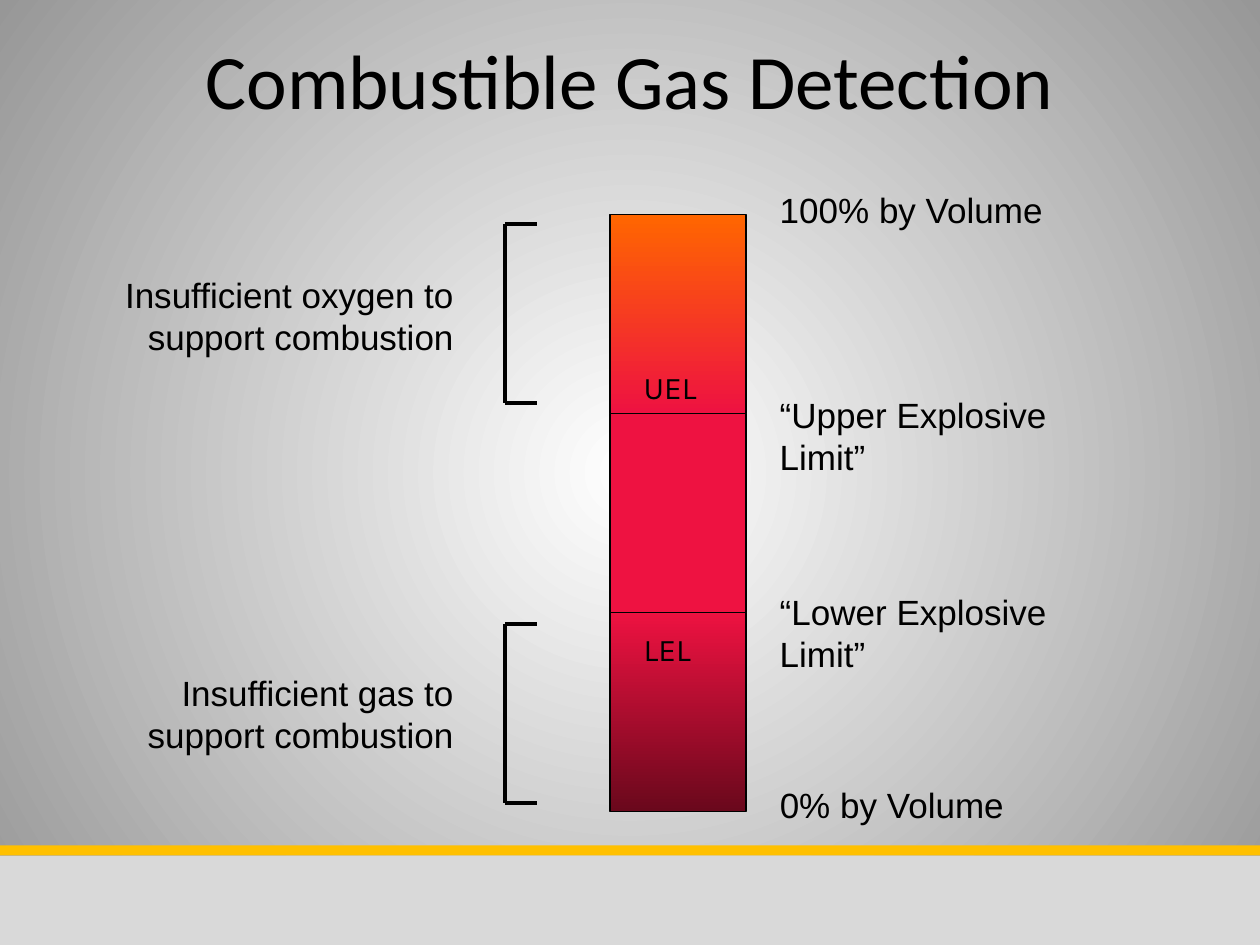
from lxml.etree import SubElement
from pptx import Presentation
from pptx.dml.color import RGBColor
from pptx.enum.shapes import MSO_CONNECTOR, MSO_SHAPE
from pptx.enum.text import MSO_ANCHOR, PP_ALIGN
from pptx.oxml.ns import qn
from pptx.util import Inches, Pt

HEX = {
    "black": "000000", "white": "FFFFFF", "gray": "979797", "base": "D9D9D9",
    "gold": "FFC000", "orange": "FF6600", "red": "EE1241", "dark": "6A081C",
}


def tint(name):
    """Return the named colour."""
    return RGBColor.from_string(HEX[name])


def blend(fill, first, last):
    """Fill with two colours and return the fill."""
    fill.gradient()
    for stop, name in zip(fill.gradient_stops, (first, last)):
        stop.color.rgb = tint(name)
    for stop, place in zip(fill.gradient_stops, (0, 1)):
        stop.position = place
    return fill


def glow(slide):
    """Give the slide a round gradient that starts at its centre."""
    blend(slide.background.fill, "white", "gray")
    grad = slide.element.find(".//" + qn("a:gradFill"))
    grad.remove(grad.find(qn("a:lin")))
    ring = SubElement(grad, qn("a:path"), {"path": "circle"})
    SubElement(ring, qn("a:fillToRect"), dict.fromkeys("ltrb", "50000"))


def block(slide, left, top, width, height, first, last=None, edge=False):
    """Draw a rectangle in one colour or in a downward gradient."""
    box = slide.shapes.add_shape(
        MSO_SHAPE.RECTANGLE, Inches(left), Inches(top), Inches(width), Inches(height))
    box.shadow.inherit = False
    if last:
        blend(box.fill, first, last).gradient_angle = 270
    else:
        box.fill.solid()
        box.fill.fore_color.rgb = tint(first)
    if edge:
        box.line.color.rgb = tint("black")
        box.line.width = Pt(0.75)
    else:
        box.line.fill.background()


def label(slide, text, left, top, width, height, size=20, font="Arial",
          align=PP_ALIGN.LEFT, wrap=False, inset=0.1, anchor=MSO_ANCHOR.TOP):
    """Place one paragraph of text."""
    box = slide.shapes.add_textbox(
        Inches(left), Inches(top), Inches(width), Inches(height))
    frame = box.text_frame
    frame.word_wrap = wrap
    frame.margin_right = Inches(inset)
    frame.vertical_anchor = anchor
    para = frame.paragraphs[0]
    para.alignment = align
    run = para.add_run()
    run.text = text
    run.font.name = font
    run.font.size = Pt(size)
    run.font.color.rgb = tint("black")


def stroke(slide, start, end):
    """Draw a straight black line."""
    line = slide.shapes.add_connector(
        MSO_CONNECTOR.STRAIGHT, *map(Inches, start + end))
    line.line.color.rgb = tint("black")
    line.line.width = Pt(2.25)
    SubElement(line.element.spPr, qn("a:effectLst"))


def bracket(slide, top, left=4.01, right=4.26, height=1.42):
    """Draw a square bracket that opens to the right."""
    low = top + height
    stroke(slide, (left, top), (left, low))
    for y in (low, top):
        stroke(slide, (left, y), (right, y))


def main():
    """Build the slide and save it."""
    deck = Presentation()
    deck.slide_width, deck.slide_height = Inches(10), Inches(7.5)
    slide = deck.slides.add_slide(deck.slide_layouts[6])
    glow(slide)
    block(slide, -0.03, 6.79, 10.03, 0.71, "base")
    block(slide, -0.03, 6.71, 10.03, 0.08, "gold")
    label(slide, "Combustible Gas Detection", 0.5, 0, 9, 1.25, 44, "Calibri",
          PP_ALIGN.CENTER, True, anchor=MSO_ANCHOR.MIDDLE)

    zones = [("orange", "red"), ("red", None), ("red", "dark")]
    for i, (first, last) in enumerate(zones):
        block(slide, 4.84, 1.7 + i * 1.58, 1.08, 1.58, first, last, True)
    for text, top, width in [("LEL", 4.95, 0.59), ("UEL", 2.87, 0.63)]:
        label(slide, text, 5.01, top, width, 0.4, 18, "Karla")

    for text, top, width in [("0% by Volume", 6.17, 1.99),
                             ("100% by Volume", 1.45, 2.3)]:
        label(slide, text, 6.09, top, width, 0.43)
    for text, top in [("“Upper Explosive Limit”", 3.07),
                      ("“Lower Explosive Limit”", 4.64)]:
        label(slide, text, 6.09, top, 3.07, 0.43, wrap=True, inset=0.6)

    for text, left, top, mark in [
            ("Insufficient gas to support combustion", 0.93, 5.28, 4.95),
            ("Insufficient oxygen to support combustion", 0.68, 2.12, 1.78)]:
        bracket(slide, mark)
        label(slide, text, left, top, 3.7 - left, 0.77,
              align=PP_ALIGN.RIGHT, wrap=True)
    deck.save("out.pptx")


if __name__ == "__main__":
    main()
